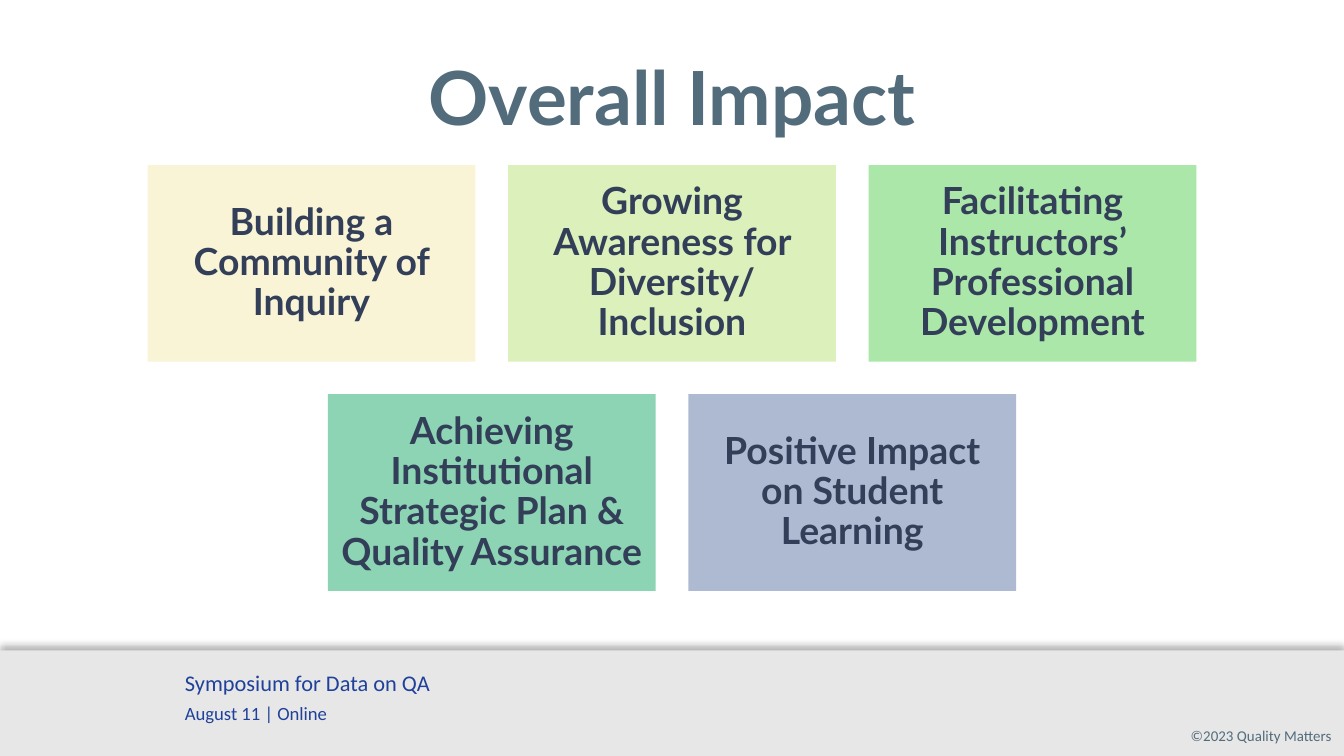
from lxml.etree import SubElement
from pptx import Presentation
from pptx.dml.color import RGBColor
from pptx.enum.shapes import MSO_SHAPE as SHAPE
from pptx.enum.text import MSO_ANCHOR as ANCHOR, MSO_AUTO_SIZE as FIT, PP_ALIGN as ALIGN
from pptx.oxml.ns import qn
from pptx.util import Pt

SLIDE_W, SLIDE_H = 720, 405
BOX_W, BOX_H, GAP = 175.6, 105.3, 17.5
GRID_TOP = 88.4
BAND_TOP = 348.5

# Each box: text, fill, opacity in percent
ROWS = [
    [("Building a Community of Inquiry", "FAF4D7", 100),
     ("Growing Awareness for Diversity/\vInclusion", "DBF0BA", 100),
     ("Facilitating Instructors’ Professional Development", "A4E5A1", 90)],
    [("Achieving Institutional Strategic Plan & Quality Assurance", "8CD4B3", 100),
     ("Positive Impact on Student Learning", "A6B3CC", 90)],
]
TITLE = dict(name="Lato", size=Pt(40), bold=True)
BOX = dict(name="Lato", size=Pt(20), bold=True)
EVENT = dict(name="Calibri", size=Pt(12))
DATE = dict(name="Calibri", size=Pt(10))
COPYRIGHT = dict(name="Calibri", size=Pt(8))


def rgb(value):
    return RGBColor.from_string(value)


def set_attrs(obj, values):
    for name, value in values.items():
        setattr(obj, name, value)


def write(p, text, font, color, **layout):
    p.text = text
    set_attrs(p, layout)
    for r in p.runs:
        set_attrs(r.font, font)
        r.font.color.rgb = rgb(color)


def set_frame(tf, margins, anchor, fit=FIT.NONE):
    """Set margins given as left, top, right, bottom, with wrapping on."""
    sides = ("margin_left", "margin_top", "margin_right", "margin_bottom")
    set_attrs(tf, dict(zip(sides, map(Pt, margins))))
    set_attrs(tf, dict(word_wrap=True, vertical_anchor=anchor, auto_size=fit))


def add_rect(s, x, y, w, h, fill, opacity=100):
    sp = s.shapes.add_shape(SHAPE.RECTANGLE, Pt(x), Pt(y), Pt(w), Pt(h))
    sp.shadow.inherit = False
    sp.line.fill.background()
    sp.fill.solid()
    sp.fill.fore_color.rgb = rgb(fill)
    if opacity < 100:
        color = sp.fill._xPr.find(".//" + qn("a:srgbClr"))
        SubElement(color, qn("a:alpha"), val=str(opacity * 1000))
    return sp


def add_text(s, x, y, w, h, margins):
    tf = s.shapes.add_textbox(Pt(x), Pt(y), Pt(w), Pt(h)).text_frame
    set_frame(tf, margins, ANCHOR.TOP, FIT.SHAPE_TO_FIT_TEXT)
    return tf


def add_upward_shadow(sp):
    effects = sp._element.spPr.find(qn("a:effectLst"))
    shadow = SubElement(effects, qn("a:outerShdw"), blurRad=str(Pt(4)),
                        dist=str(Pt(3)), dir="16200000", rotWithShape="0")
    color = SubElement(shadow, qn("a:srgbClr"), val="000000")
    SubElement(color, qn("a:alpha"), val="29000")


def add_footer(s):
    band = add_rect(s, 0, BAND_TOP, SLIDE_W, SLIDE_H - BAND_TOP, "E7E7E7")
    add_upward_shadow(band)
    tf = add_text(s, 599, 386, 114.5, 17.3, (7.2, 3.6, 0, 3.6))
    write(tf.paragraphs[0], "©2023 Quality Matters", COPYRIGHT, "526C7C",
          alignment=ALIGN.RIGHT)
    tf = add_text(s, 92, 355, 460, 36.7, (7.2, 3.6, 7.2, 3.6))
    write(tf.paragraphs[0], "Symposium for Data on QA", EVENT, "1F419A")
    write(tf.add_paragraph(), "August 11 | Online", DATE, "1F419A",
          space_before=Pt(3))


def add_impact_boxes(s):
    """Stack the rows of boxes, each row centred on the slide."""
    for i, row in enumerate(ROWS):
        left = (SLIDE_W - len(row) * BOX_W - (len(row) - 1) * GAP) / 2
        y = GRID_TOP + i * (BOX_H + GAP)
        for j, (text, fill, opacity) in enumerate(row):
            sp = add_rect(s, left + j * (BOX_W + GAP), y, BOX_W, BOX_H, fill, opacity)
            set_frame(sp.text_frame, (6, 6, 6, 6), ANCHOR.MIDDLE)
            write(sp.text_frame.paragraphs[0], text, BOX, "333F58",
                  alignment=ALIGN.CENTER, line_spacing=0.9)


def set_title(s, text):
    sp = s.shapes.title
    set_attrs(sp, dict(left=Pt(0), top=Pt(26), width=Pt(SLIDE_W), height=Pt(50)))
    set_frame(sp.text_frame, (7.2, 3.6, 7.2, 3.6), ANCHOR.MIDDLE)
    write(sp.text_frame.paragraphs[0], text, TITLE, "526C7C", alignment=ALIGN.CENTER)


def main():
    prs = Presentation()
    prs.slide_width, prs.slide_height = Pt(SLIDE_W), Pt(SLIDE_H)
    s = prs.slides.add_slide(prs.slide_layouts[5])
    set_title(s, "Overall Impact")
    add_footer(s)
    add_impact_boxes(s)
    prs.save("out.pptx")


if __name__ == "__main__":
    main()
